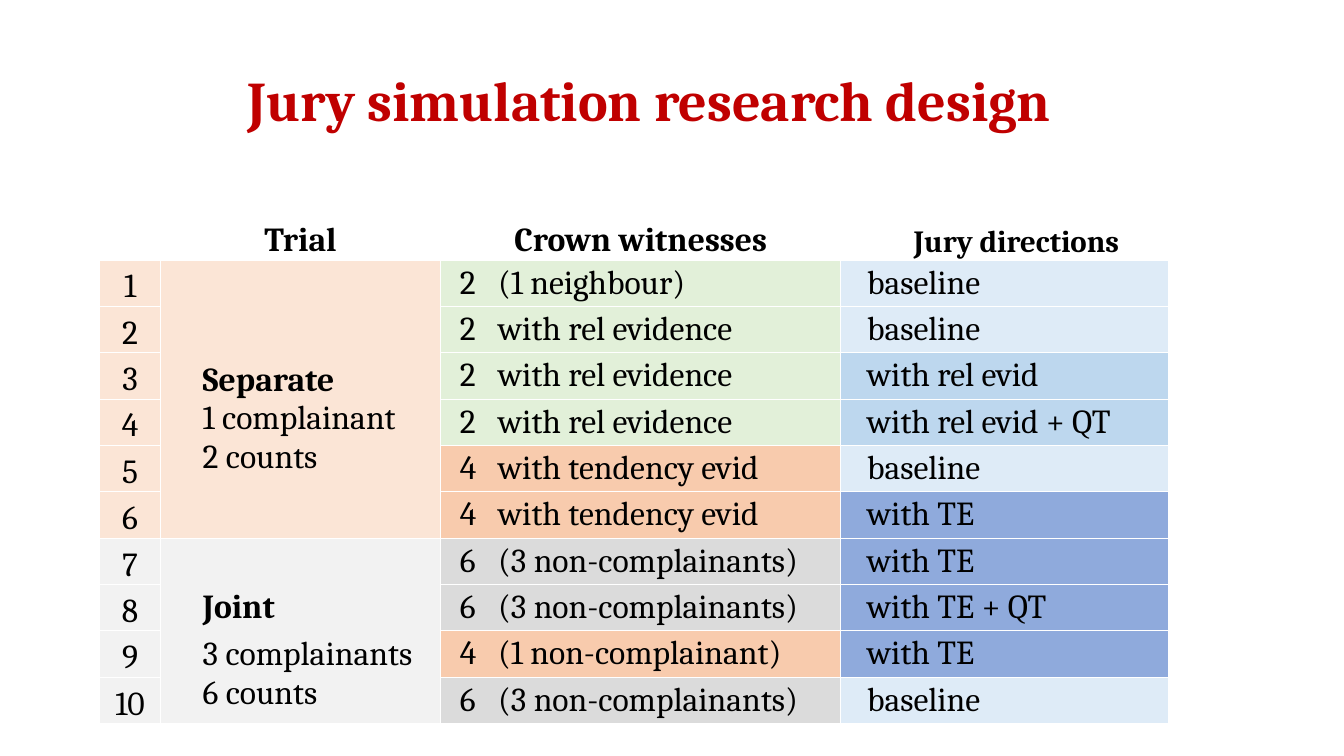
from dataclasses import dataclass

import lxml.etree
import pptx
import pptx.dml.color
import pptx.enum.text
import pptx.oxml.ns
import pptx.table
import pptx.text.text
import pptx.util

Inches = pptx.util.Inches
Pt = pptx.util.Pt
Align = pptx.enum.text.PP_ALIGN
Anchor = pptx.enum.text.MSO_ANCHOR


@dataclass(frozen=True)
class Theme:
    font: str = "Cambria"
    title_size: int = 40
    body_size: int = 24
    small_header_size: int = 22
    title: str = "C00000"
    text: str = "000000"
    header: str = "FFFFFF"
    separate: str = "FBE5D6"
    joint: str = "F2F2F2"
    baseline: str = "DEEBF7"
    relationship: str = "BDD7EE"
    tendency: str = "8FAADC"


@dataclass(frozen=True)
class Condition:
    witnesses: int
    evidence: str
    directions: str


@dataclass(frozen=True)
class Trial:
    name: str
    details: tuple[str, ...]
    fill: str
    name_gap: int
    conditions: tuple[Condition, ...]


THEME = Theme()
WITNESS_FILLS = {2: "E2F0D9", 4: "F8CBAD", 6: "DBDBDB"}
HEADERS = ("", "Trial", "Crown witnesses", "Jury directions")
COLUMN_WIDTHS = (0.6, 2.78, 3.97, 3.25)
HEADER_HEIGHT = 0.98
ROW_HEIGHT = 0.46
SIDE_MARGIN = 0.07
TRIALS = (
    Trial("Separate", ("1 complainant", "2 counts"), THEME.separate, 0, (
        Condition(2, "(1 neighbour)", "baseline"),
        Condition(2, "with rel evidence", "baseline"),
        Condition(2, "with rel evidence", "with rel evid"),
        Condition(2, "with rel evidence", "with rel evid + QT"),
        Condition(4, "with tendency evid", "baseline"),
        Condition(4, "with tendency evid", "with TE"),
    )),
    Trial("Joint", ("3 complainants", "6 counts"), THEME.joint, 6, (
        Condition(6, "(3 non-complainants)", "with TE"),
        Condition(6, "(3 non-complainants)", "with TE + QT"),
        Condition(4, "(1 non-complainant)", "with TE"),
        Condition(6, "(3 non-complainants)", "baseline"),
    )),
)


def directions_fill(directions: str) -> str:
    if directions == "baseline":
        return THEME.baseline
    return THEME.tendency if "TE" in directions else THEME.relationship


def style_paragraph(paragraph: pptx.text.text._Paragraph, size: int,
                    color: str = THEME.text, bold: bool = False) -> None:
    font = paragraph.font
    font.name = THEME.font
    font.size = Pt(size)
    font.bold = bold
    font.color.rgb = pptx.dml.color.RGBColor.from_string(color)


def add_tab_stop(paragraph: pptx.text.text._Paragraph, position: float) -> None:
    qn = pptx.oxml.ns.qn
    stops = lxml.etree.SubElement(paragraph._p.get_or_add_pPr(), qn("a:tabLst"))
    lxml.etree.SubElement(stops, qn("a:tab"), pos=str(Inches(position)), algn="l")


def format_cell(cell: pptx.table._Cell, fill: str, left: float = SIDE_MARGIN,
                top: float = 0, anchor: Anchor = Anchor.MIDDLE) -> None:
    cell.fill.solid()
    cell.fill.fore_color.rgb = pptx.dml.color.RGBColor.from_string(fill)
    cell.margin_left = Inches(left)
    cell.margin_right = Inches(SIDE_MARGIN)
    cell.margin_top = Inches(top)
    cell.margin_bottom = 0
    cell.vertical_anchor = anchor


def write_line(cell: pptx.table._Cell, text: str, size: int = THEME.body_size,
               bold: bool = False, align: Align = Align.LEFT,
               spacing: int | None = None, tab: float | None = None) -> None:
    paragraph = cell.text_frame.paragraphs[0]
    paragraph.text = text
    paragraph.alignment = align
    if spacing:
        paragraph.line_spacing = Pt(spacing)
    if tab:
        add_tab_stop(paragraph, tab)
    style_paragraph(paragraph, size, bold=bold)


def fill_header(table: pptx.table.Table) -> None:
    for column, header in enumerate(HEADERS):
        cell = table.cell(0, column)
        is_last = column == len(HEADERS) - 1
        format_cell(cell, THEME.header, left=0.3 if is_last else SIDE_MARGIN,
                    anchor=Anchor.BOTTOM)
        size = THEME.small_header_size if is_last else THEME.body_size
        write_line(cell, header, size, bold=True, align=Align.CENTER)


def fill_trial(table: pptx.table.Table, trial: Trial, first_row: int) -> None:
    last_row = first_row + len(trial.conditions) - 1
    summary = table.cell(first_row, 1)
    summary.merge(table.cell(last_row, 1))
    format_cell(summary, trial.fill, left=0.42, top=0.39)
    write_line(summary, trial.name, bold=True)
    for index, detail in enumerate(trial.details):
        paragraph = summary.text_frame.add_paragraph()
        paragraph.text = detail
        if index == 0 and trial.name_gap:
            paragraph.space_before = Pt(trial.name_gap)
        style_paragraph(paragraph, THEME.body_size)

    for row, condition in enumerate(trial.conditions, first_row):
        number, witnesses, directions = (table.cell(row, column) for column in (0, 2, 3))
        format_cell(number, trial.fill)
        write_line(number, str(row), align=Align.CENTER, spacing=33)
        format_cell(witnesses, WITNESS_FILLS[condition.witnesses], left=0.19)
        write_line(witnesses, f"{condition.witnesses}\t{condition.evidence}", tab=0.38)
        format_cell(directions, directions_fill(condition.directions), left=0.26)
        write_line(directions, condition.directions)


def main() -> None:
    presentation = pptx.Presentation()
    presentation.slide_width = Inches(13.33)
    presentation.slide_height = Inches(7.5)
    slide = presentation.slides.add_slide(presentation.slide_layouts[5])

    title = slide.shapes.title
    title.left, title.top = Inches(0.69), Inches(0.17)
    title.width, title.height = Inches(11.5), Inches(1.72)
    title.text_frame.vertical_anchor = Anchor.MIDDLE
    heading = title.text_frame.paragraphs[0]
    heading.text = "Jury simulation research design"
    heading.alignment = Align.CENTER
    heading.line_spacing = 0.9
    style_paragraph(heading, THEME.title_size, THEME.title, bold=True)

    condition_count = sum(len(trial.conditions) for trial in TRIALS)
    table = slide.shapes.add_table(
        condition_count + 1, len(HEADERS), Inches(0.99), Inches(1.6),
        Inches(sum(COLUMN_WIDTHS)),
        Inches(HEADER_HEIGHT + condition_count * ROW_HEIGHT)).table
    table.horz_banding = False
    for column, width in zip(table.columns, COLUMN_WIDTHS):
        column.width = Inches(width)
    for index, row in enumerate(table.rows):
        row.height = Inches(ROW_HEIGHT if index else HEADER_HEIGHT)

    fill_header(table)
    first_row = 1
    for trial in TRIALS:
        fill_trial(table, trial, first_row)
        first_row += len(trial.conditions)

    presentation.save("out.pptx")


if __name__ == "__main__":
    main()
